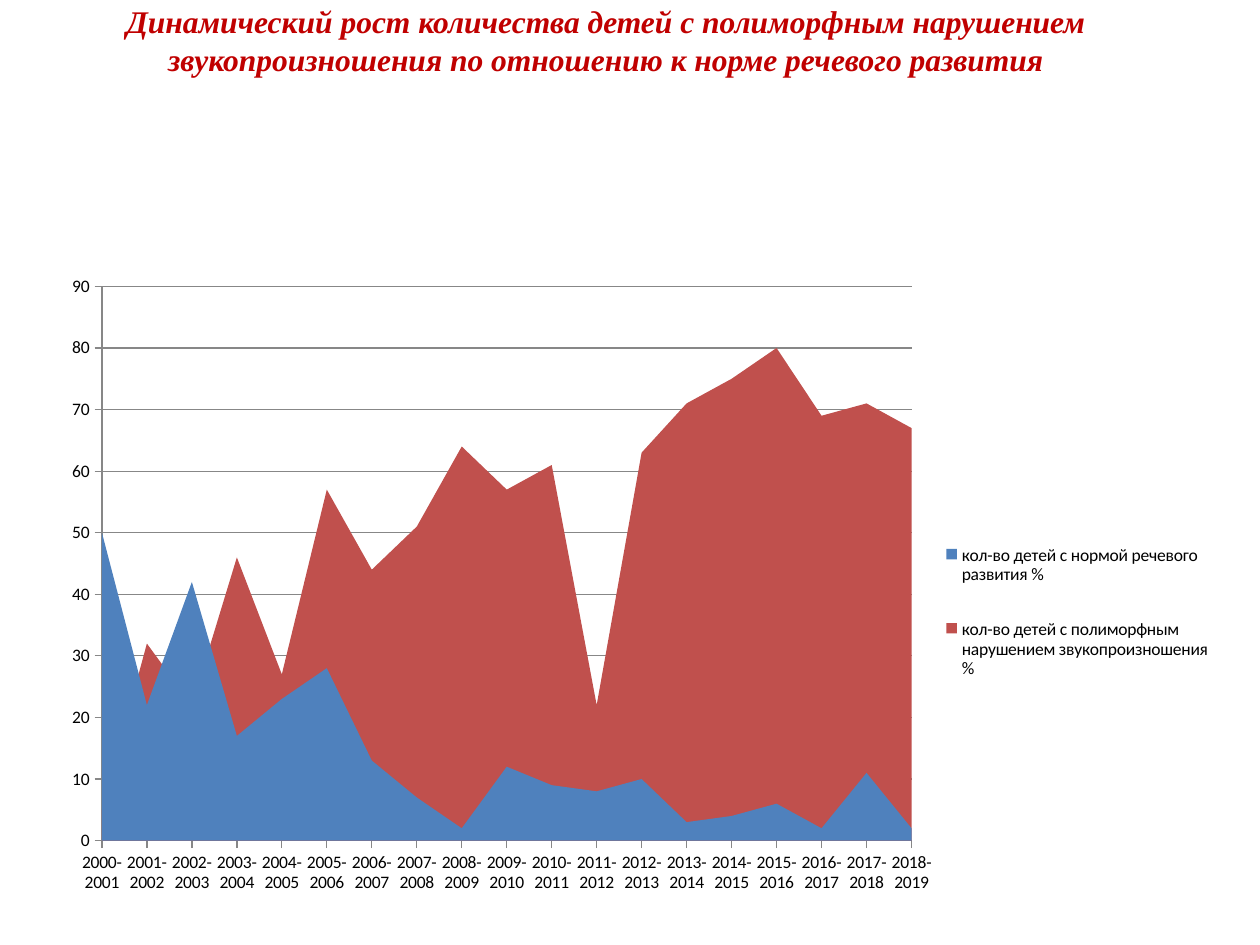
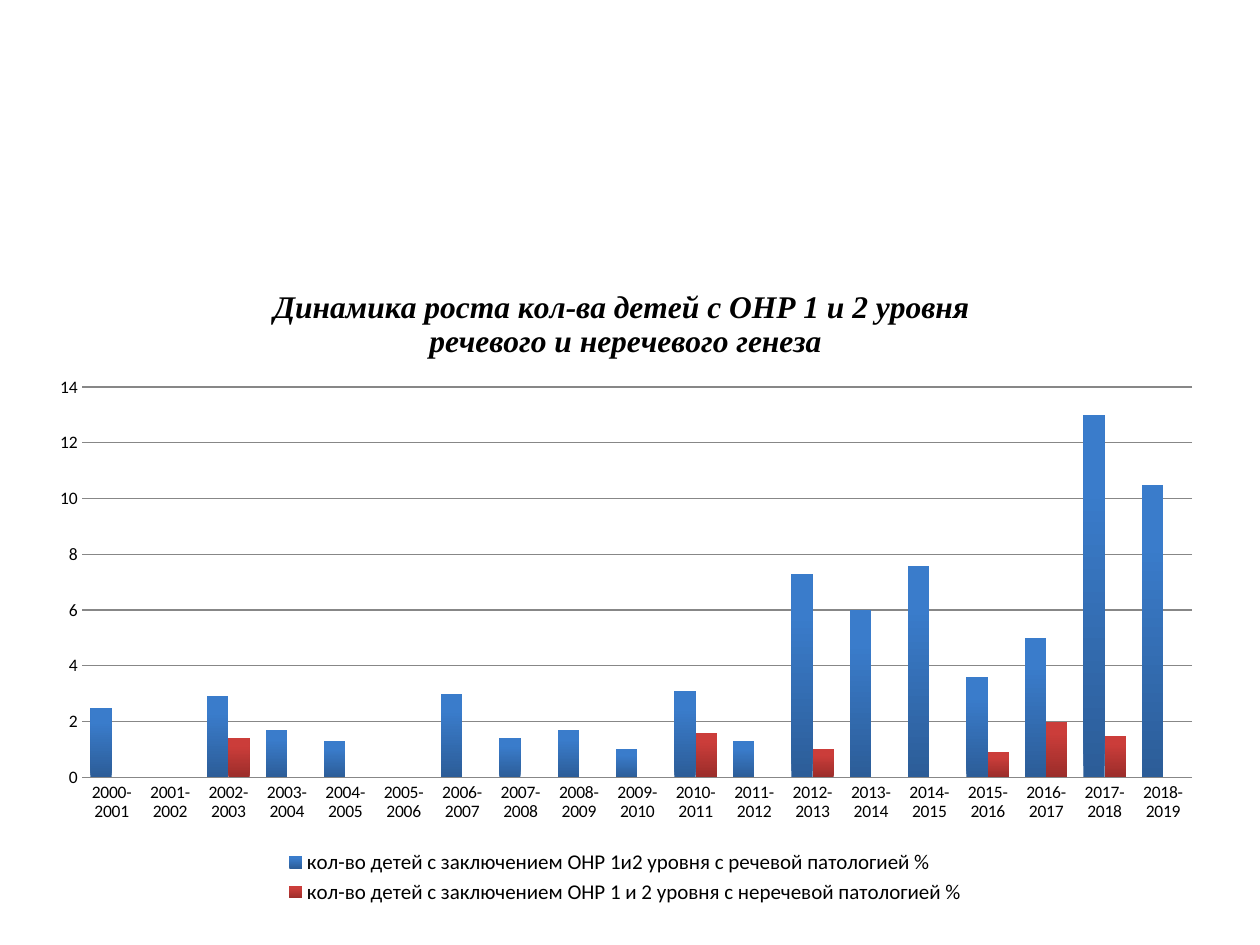
"""Build two slides with charts on the growth of speech disorders in children."""
from dataclasses import dataclass
from typing import Optional

from lxml.etree import SubElement
from pptx import Presentation
from pptx.chart.chart import Chart
from pptx.chart.data import CategoryChartData as Data
from pptx.dml.color import RGBColor
from pptx.enum.chart import XL_CHART_TYPE as Kind, XL_LEGEND_POSITION as Side
from pptx.enum.chart import XL_TICK_MARK as Tick
from pptx.enum.text import MSO_ANCHOR as Anchor, PP_ALIGN as Align
from pptx.oxml import parse_xml
from pptx.oxml.ns import nsdecls, qn
from pptx.util import Inches, Pt

RED = RGBColor(0xC0, 0x00, 0x00)
BLACK = RGBColor(0x00, 0x00, 0x00)
GREY = RGBColor(0x87, 0x87, 0x87)
FLAT = [RGBColor(0x4F, 0x81, 0xBD), RGBColor(0xC0, 0x50, 0x4D)]
DARK = [RGBColor(0x2C, 0x5D, 0x98), RGBColor(0x9B, 0x2D, 0x2A)]
LIGHT = [RGBColor(0x3A, 0x7C, 0xCB), RGBColor(0xCB, 0x3D, 0x3A)]
SERIF, SANS = "Times New Roman", "Calibri"
YEARS = [f"{year}-{year + 1}" for year in range(2000, 2019)]
Box = tuple[float, float, float, float]


@dataclass
class Graph:
    """Describe one chart: its place, data and axes."""
    kind: Kind
    box: Box
    plot: Box
    rows: dict[str, list[Optional[float]]]
    top: int
    step: int
    tick: Tick
    side: Side
    size: int
    key: Optional[Box] = None


GROWTH = Graph(
    Kind.AREA, (0.28, 2.18, 9.45, 5.2), (0.056, 0.018, 0.68, 0.846),
    {"кол-во детей с нормой речевого развития %":
        [50, 22, 42, 17, 23, 28, 13, 7, 2, 12, 9, 8, 10, 3, 4, 6, 2, 11, 2],
     "кол-во детей с полиморфным нарушением звукопроизношения %":
        [5, 32, 22, 46, 27, 57, 44, 51, 64, 57, 61, 22, 63, 71, 75, 80, 69, 71, 67]},
    90, 10, Tick.OUTSIDE, Side.RIGHT, 10, (0.76, 0.36, 0.23, 0.31))

LEVELS = Graph(
    Kind.COLUMN_CLUSTERED, (0.28, 2.1, 9.37, 5.12), (0.04, 0.19, 0.94, 0.605),
    {"кол-во детей с заключением ОНР 1и2 уровня с речевой патологией %":
        [2.5, None, 2.9, 1.7, 1.3, None, 3, 1.4, 1.7, 1, 3.1, 1.3,
         7.3, 6, 7.6, 3.6, 5, 13, 10.5],
     "кол-во детей с заключением ОНР 1 и 2 уровня с неречевой патологией %":
        [None, None, 1.4, None, None, None, None, None, None, None, 1.6, None,
         1, None, None, 0.9, 2, 1.5, None]},
    14, 2, Tick.NONE, Side.BOTTOM, 12)


def style(font, size: int, face: str, color: RGBColor, strong: bool = False) -> None:
    """Set the face, size and colour of a font."""
    font.size, font.name = Pt(size), face
    font.color.rgb = color
    font.bold = font.italic = strong


def frame(box: Box, inner: bool = False):
    """Make a manual layout element from fractions of the chart."""
    layout = parse_xml(f"<c:layout {nsdecls('c')}><c:manualLayout/></c:layout>")
    parts = [("layoutTarget", "inner")] if inner else []
    parts += [("xMode", "edge"), ("yMode", "edge"), *zip("xywh", map(str, box))]
    for name, value in parts:
        SubElement(layout[0], qn(f"c:{name}")).set("val", value)
    return layout


def draw(slide, graph: Graph) -> Chart:
    """Add a chart with its axes, plot place and legend."""
    data = Data()
    data.categories = YEARS
    for name, values in graph.rows.items():
        data.add_series(name, values)
    chart = slide.shapes.add_chart(graph.kind, *map(Inches, graph.box), data).chart
    style(chart.font, 10, SANS, BLACK)
    chart.has_title = False

    cats, vals = chart.category_axis, chart.value_axis
    for axis in (cats, vals):
        axis.major_tick_mark, axis.minor_tick_mark = graph.tick, Tick.NONE
        axis.format.line.color.rgb = GREY
        axis.format.line.width = Pt(0.75)
    cats.has_major_gridlines = False
    vals.has_major_gridlines = True
    grid = vals.major_gridlines.format.line
    grid.color.rgb, grid.width = GREY, Pt(0.75)
    vals.minimum_scale, vals.maximum_scale, vals.major_unit = 0, graph.top, graph.step
    vals.tick_labels.number_format = "General"
    vals.tick_labels.number_format_is_linked = False

    area = chart.element.find(".//" + qn("c:plotArea"))
    for old in area.findall(qn("c:layout")):
        area.remove(old)
    area.insert(0, frame(graph.plot, True))

    chart.has_legend = True
    legend = chart.legend
    legend.position, legend.include_in_layout = graph.side, False
    style(legend.font, graph.size, SANS, BLACK)
    if graph.key:
        for old in legend._element.findall(qn("c:layout")):
            legend._element.remove(old)
        legend._element.find(qn("c:legendPos")).addnext(frame(graph.key))
    return chart


def growth(deck) -> None:
    """Build the slide with the area chart."""
    slide = deck.slides.add_slide(deck.slide_layouts[5])
    title = slide.shapes.title
    title.left, title.top = Inches(0.28), Inches(-0.27)
    title.width, title.height = Inches(9.06), Inches(1.18)
    title.text_frame.vertical_anchor = Anchor.MIDDLE
    para = title.text_frame.paragraphs[0]
    para.alignment = Align.CENTER
    run = para.add_run()
    run.text = ("Динамический рост количества детей с полиморфным нарушением "
                "звукопроизношения по отношению к норме речевого развития")
    style(run.font, 18, SERIF, RED, True)
    chart = draw(slide, GROWTH)
    for series, color in zip(chart.plots[0].series, FLAT):
        series.format.fill.solid()
        series.format.fill.fore_color.rgb = color


def levels(deck) -> None:
    """Build the slide with the column chart."""
    chart = draw(deck.slides.add_slide(deck.slide_layouts[6]), LEVELS)
    chart.value_axis.format.line.fill.background()
    chart.has_title = True
    text = chart.chart_title.text_frame
    lines = "Динамика роста кол-ва детей с ОНР 1 и 2 уровня ", "речевого и неречевого генеза"
    for index, line in enumerate(lines):
        para = text.add_paragraph() if index else text.paragraphs[0]
        run = para.add_run()
        run.text = line
        style(run.font, 18, SERIF, BLACK, True)
    plot = chart.plots[0]
    plot.gap_width, plot.overlap, plot.vary_by_categories = 75, 0, False
    for series, dark, light in zip(plot.series, DARK, LIGHT):
        series.invert_if_negative = False
        fill = series.format.fill
        fill.gradient()
        fill.gradient_angle = 90
        for stop, color, place in zip(fill.gradient_stops, (dark, light), (0, 0.8)):
            stop.color.rgb, stop.position = color, place


def main() -> None:
    """Build and save the deck."""
    deck = Presentation()
    deck.slide_width, deck.slide_height = Inches(10), Inches(7.5)
    growth(deck)
    levels(deck)
    deck.save("out.pptx")


if __name__ == "__main__":
    main()
